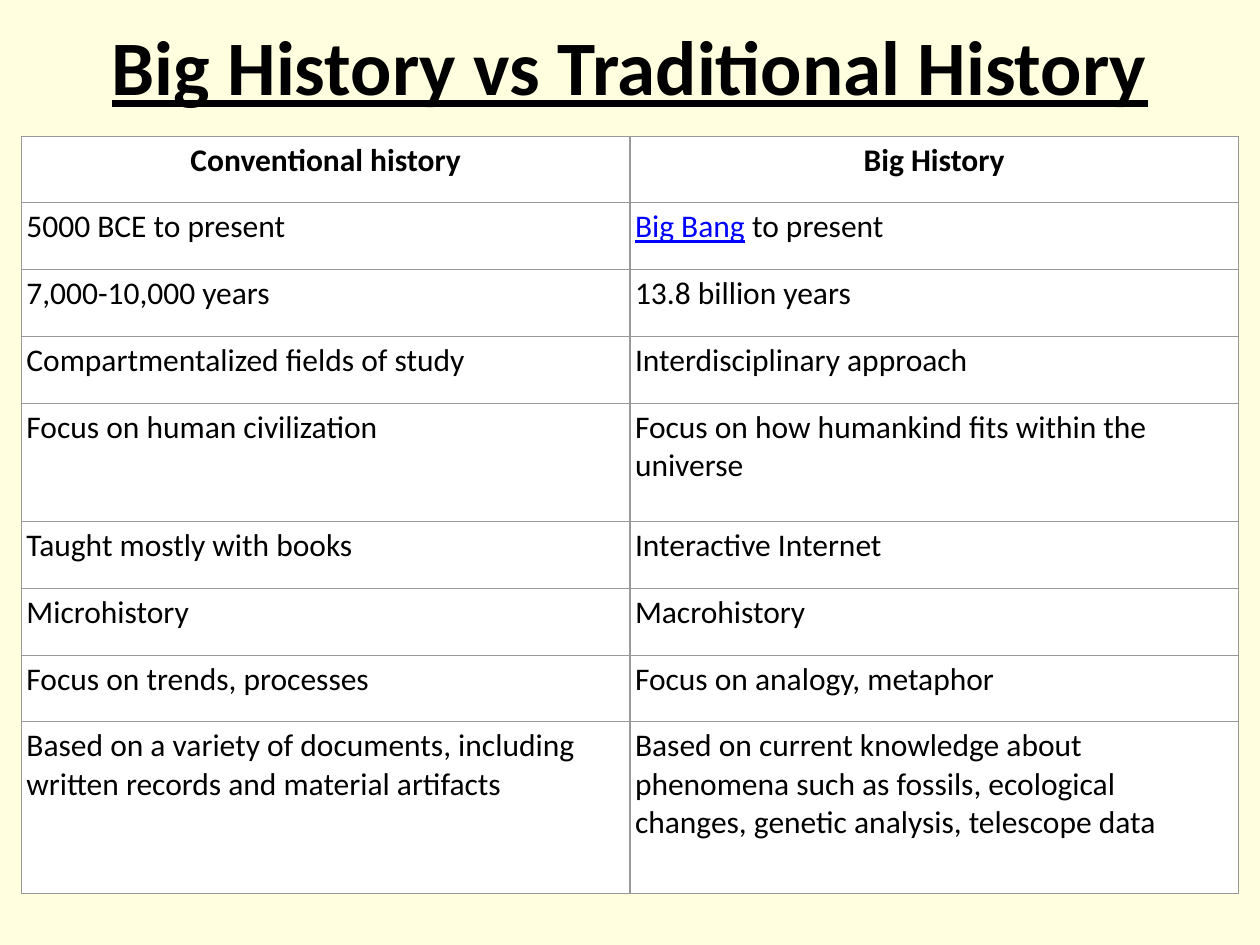
from lxml.etree import SubElement
from pptx import Presentation
from pptx.dml.color import RGBColor
from pptx.enum.text import MSO_ANCHOR, PP_ALIGN
from pptx.oxml.ns import qn
from pptx.util import Inches, Pt

WIDTH, HEIGHT = 10, 7.5
TITLE = "Big History vs Traditional History"
ROWS = [
    ("Conventional history", "Big History"),
    ("5000 BCE to present", ("Big Bang", " to present")),
    ("7,000-10,000 years", "13.8 billion years"),
    ("Compartmentalized fields of study", "Interdisciplinary approach"),
    ("Focus on human civilization", "Focus on how humankind fits within the universe"),
    ("Taught mostly with books", "Interactive Internet"),
    ("Microhistory", "Macrohistory"),
    ("Focus on trends, processes", "Focus on analogy, metaphor"),
    ("Based on a variety of documents, including written records and material artifacts",
     "Based on current knowledge about phenomena such as fossils, ecological changes, "
     "genetic analysis, telescope data"),
]
ROW_HEIGHT, TALL_ROWS = 0.53, {4: 0.94, 8: 1.36}
SIDE, TOP, INSET = 0.17, 1.08, 0.04
PAGE, CELL, BORDER, INK, LINK = "FFFFE0", "FFFFFF", "999999", "000000", "0000FF"


def rgb(value):
    return RGBColor.from_string(value)


def set_attrs(obj, values):
    for name, value in values.items():
        setattr(obj, name, value)


def add_run(p, text, color=INK, **font):
    r = p.add_run()
    r.text = text
    set_attrs(r.font, {"name": "Calibri", "size": Pt(18), **font})
    r.font.color.rgb = rgb(color)


def add_borders(cell):
    tc_pr = cell._tc.get_or_add_tcPr()
    for i, side in enumerate(("lnL", "lnR", "lnT", "lnB")):
        ln = tc_pr.makeelement(qn(f"a:{side}"), {"w": str(Pt(0.75))})
        fill = SubElement(ln, qn("a:solidFill"))
        SubElement(fill, qn("a:srgbClr"), val=BORDER)
        tc_pr.insert(i, ln)


def add_title(s):
    margin = 0.05 * WIDTH
    box = s.shapes.add_textbox(Inches(margin), Inches(0.08),
                               Inches(WIDTH - 2 * margin), Inches(0.87))
    tf = box.text_frame
    set_attrs(tf, {"word_wrap": True, "vertical_anchor": MSO_ANCHOR.MIDDLE})
    p = tf.paragraphs[0]
    p.alignment = PP_ALIGN.CENTER
    add_run(p, TITLE, size=Pt(44), bold=True, underline=True)


def fill_cell(cell, content, header):
    set_attrs(cell, {f"margin_{side}": Inches(INSET)
                     for side in ("left", "right", "top", "bottom")})
    cell.fill.solid()
    cell.fill.fore_color.rgb = rgb(CELL)
    add_borders(cell)
    p = cell.text_frame.paragraphs[0]
    p.alignment = PP_ALIGN.CENTER if header else PP_ALIGN.LEFT
    if isinstance(content, tuple):
        term, content = content
        add_run(p, term, LINK, bold=False, underline=True)
    add_run(p, content, bold=header)


def add_comparison(s):
    heights = [TALL_ROWS.get(i, ROW_HEIGHT) for i in range(len(ROWS))]
    table = s.shapes.add_table(len(ROWS), 2, Inches(SIDE), Inches(TOP),
                               Inches(WIDTH - 2 * SIDE), Inches(sum(heights))).table
    set_attrs(table, {"first_row": False, "horz_banding": False})
    for i, (height, contents) in enumerate(zip(heights, ROWS)):
        table.rows[i].height = Inches(height)
        for j, content in enumerate(contents):
            fill_cell(table.cell(i, j), content, i == 0)


def main():
    prs = Presentation()
    set_attrs(prs, {"slide_width": Inches(WIDTH), "slide_height": Inches(HEIGHT)})
    s = prs.slides.add_slide(prs.slide_layouts[6])
    s.background.fill.solid()
    s.background.fill.fore_color.rgb = rgb(PAGE)
    add_title(s)
    add_comparison(s)
    prs.save("out.pptx")


if __name__ == "__main__":
    main()
